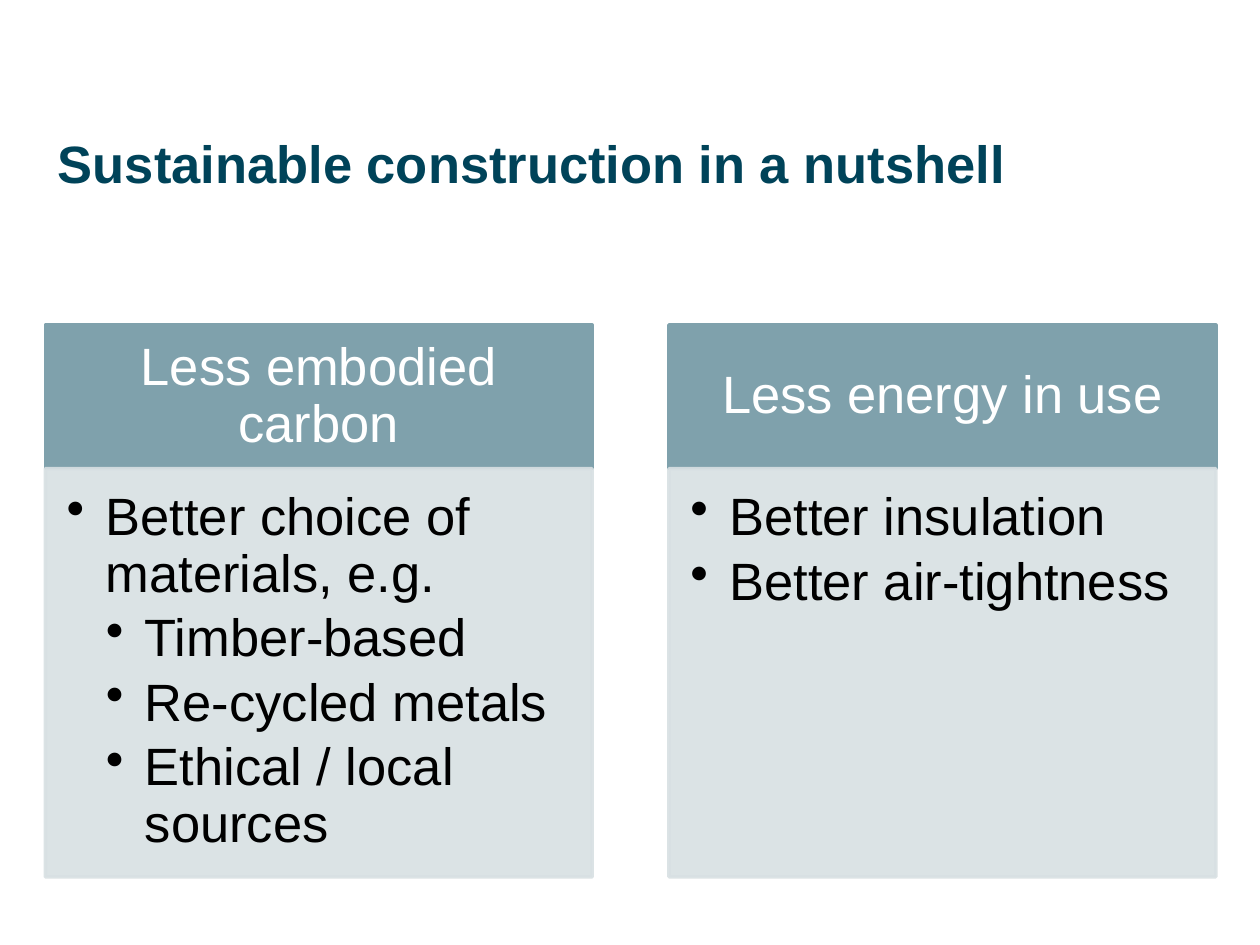
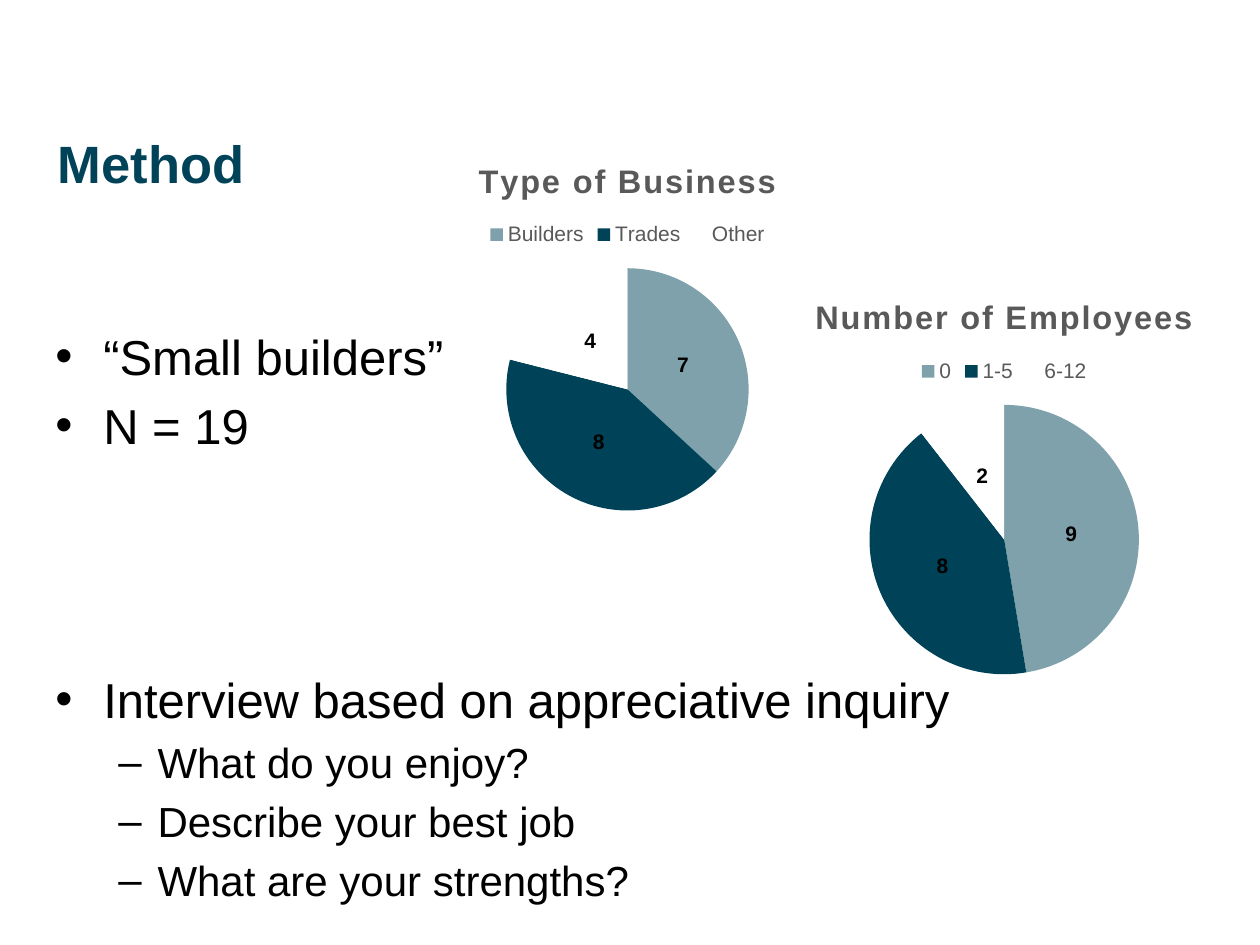
"""Build two slides on sustainable construction: a two-column summary and the study method."""
from lxml.etree import SubElement
from pptx import Presentation
from pptx.chart.data import CategoryChartData
from pptx.dml.color import RGBColor
from pptx.enum.chart import XL_CHART_TYPE, XL_LABEL_POSITION, XL_LEGEND_POSITION
from pptx.enum.shapes import MSO_SHAPE
from pptx.enum.text import MSO_ANCHOR, MSO_AUTO_SIZE, PP_ALIGN
from pptx.oxml.ns import qn
from pptx.util import Inches, Pt

TEAL = RGBColor(0x7F, 0xA1, 0xAC)
NAVY = RGBColor(0x00, 0x43, 0x59)
PALE = RGBColor(0xD8, 0xE0, 0xE3)
GREY = RGBColor(0x59, 0x59, 0x59)
BLACK = RGBColor(0, 0, 0)
WHITE = RGBColor(0xFF, 0xFF, 0xFF)

TITLE_AREA = [Inches(value) for value in (0.36, 0.99, 9.28, 1.42)]
BODY_AREA = [Inches(value) for value in (0.34, 2.54, 9.28, 3.78)]


def format_font(font, size, color, bold=False):
    """Give a font the deck's typeface with a size, colour and weight."""
    for name, value in {"name": "Arial", "size": Pt(size), "bold": bold}.items():
        setattr(font, name, value)
    font.color.rgb = color


def write_line(frame, text, size, color, layout, bold=False, bullet=None):
    """Write one paragraph; bullet is a symbol, a left margin and a hanging width."""
    para = frame.paragraphs[0] if not frame.text else frame.add_paragraph()
    if bullet:
        symbol, margin, hanging = bullet
        properties = para._p.get_or_add_pPr()
        properties.set("marL", str(Inches(margin)))
        properties.set("indent", str(-Inches(hanging)))
        SubElement(properties, qn("a:buChar")).set("char", symbol)
    for name, value in layout.items():
        setattr(para, name, value)
    span = para.add_run()
    span.text = text
    format_font(span.font, size, color, bold)


deck = Presentation()
deck.slide_width, deck.slide_height = Inches(10), Inches(7.5)

pages = []
for layout_index, title in ((5, "Sustainable construction in a nutshell"), (1, "Method")):
    page = deck.slides.add_slide(deck.slide_layouts[layout_index])
    heading = page.shapes.title
    heading.left, heading.top, heading.width, heading.height = TITLE_AREA
    heading.text_frame.vertical_anchor = MSO_ANCHOR.TOP
    heading.text_frame.auto_size = MSO_AUTO_SIZE.NONE
    write_line(heading.text_frame, title, 30, NAVY, {"alignment": PP_ALIGN.LEFT}, bold=True)
    pages.append(page)
summary_page, method_page = pages

COLUMNS = [
    ("Less embodied carbon", [
        (0, "Better choice of materials, e.g."),
        (1, "Timber-based"),
        (1, "Re-cycled metals"),
        (1, "Ethical / local sources"),
    ]),
    ("Less energy in use", [(0, "Better insulation"), (0, "Better air-tightness")]),
]
HEADER_FRAME = {"margin_left": Inches(0.23), "margin_right": Inches(0.23),
                "margin_top": Inches(0.13), "margin_bottom": Inches(0.13),
                "vertical_anchor": MSO_ANCHOR.MIDDLE, "word_wrap": True}
LIST_FRAME = {"margin_left": Inches(0.17), "margin_right": Inches(0.23),
              "margin_top": Inches(0.17), "margin_bottom": Inches(0.26),
              "vertical_anchor": MSO_ANCHOR.TOP, "word_wrap": True}
HEADER_LAYOUT = {"alignment": PP_ALIGN.CENTER, "line_spacing": 0.9}
LIST_LAYOUT = {"alignment": PP_ALIGN.LEFT, "line_spacing": 0.9, "space_after": Pt(4.5)}

for column, (header, points) in enumerate(COLUMNS):
    left = Inches(0.36 + 4.95 * column)
    boxes = []
    for top, height, color, frame_values in ((2.58, 1.14, TEAL, HEADER_FRAME),
                                             (3.72, 3.24, PALE, LIST_FRAME)):
        box = summary_page.shapes.add_shape(
            MSO_SHAPE.RECTANGLE, left, Inches(top), Inches(4.34), Inches(height))
        box.shadow.inherit = False
        box.fill.solid()
        box.fill.fore_color.rgb = color
        box.line.color.rgb = color
        box.line.width = Pt(2)
        for name, value in frame_values.items():
            setattr(box.text_frame, name, value)
        boxes.append(box)
    header_box, list_box = boxes
    for color_element in list(list_box._element.spPr.iter(qn("a:srgbClr"))):
        SubElement(color_element, qn("a:alpha")).set("val", "90000")
    write_line(header_box.text_frame, header, 30, WHITE, HEADER_LAYOUT)
    for level, text in points:
        write_line(list_box.text_frame, text, 30, BLACK, {**LIST_LAYOUT, "level": level},
                   bullet=("•", 0.31 * (level + 1), 0.31))

METHOD_POINTS = [
    (0, "“Small builders”", 0),
    (0, "N = 19", 5.6),
    (0, "Interview based on appreciative inquiry", 123.3),
    (1, "What do you enjoy?", 4.8),
    (1, "Describe your best job", 4.8),
    (1, "What are your strengths?", 4.8),
]
LEVELS = [(28, ("•", 0.38, 0.38)), (24, ("–", 0.81, 0.31))]

body = method_page.placeholders[1]
body.left, body.top, body.width, body.height = BODY_AREA
body.text_frame.auto_size = MSO_AUTO_SIZE.NONE
for level, text, gap in METHOD_POINTS:
    size, bullet = LEVELS[level]
    write_line(body.text_frame, text, size, BLACK,
               {"level": level, "space_before": Pt(gap)}, bullet=bullet)

PIES = [
    ("Type of Business", (2.92, 1.1, 4.12, 3.09), ("Builders", "Trades", "Other"), (7, 8, 4)),
    ("Number of Employees", (5.94, 2.18, 4.06, 3.31), ("0", "1-5", "6-12"), (9, 8, 2)),
]
for name, area, categories, counts in PIES:
    data = CategoryChartData()
    data.categories = categories
    data.add_series(name, counts)
    chart = method_page.shapes.add_chart(
        XL_CHART_TYPE.PIE, *[Inches(value) for value in area], data).chart
    format_font(chart.font, 10, BLACK)

    chart.has_title = True
    write_line(chart.chart_title.text_frame, name, 18.6, GREY, {}, bold=True)
    title_span = chart.chart_title.text_frame.paragraphs[0].runs[0]
    title_span._r.get_or_add_rPr().set("spc", "100")

    chart.has_legend = True
    chart.legend.position = XL_LEGEND_POSITION.TOP
    chart.legend.include_in_layout = False
    format_font(chart.legend.font, 12, GREY)

    plot = chart.plots[0]
    plot.vary_by_categories = True
    series = plot.series[0]
    for index, color in enumerate((TEAL, NAVY, WHITE)):
        slice_format = series.points[index].format
        slice_format.fill.solid()
        slice_format.fill.fore_color.rgb = color
        slice_format.line.fill.background()
    labels = series.data_labels
    labels.show_value = True
    labels.position = XL_LABEL_POSITION.CENTER
    format_font(labels.font, 12, BLACK, bold=True)

deck.save("out.pptx")
